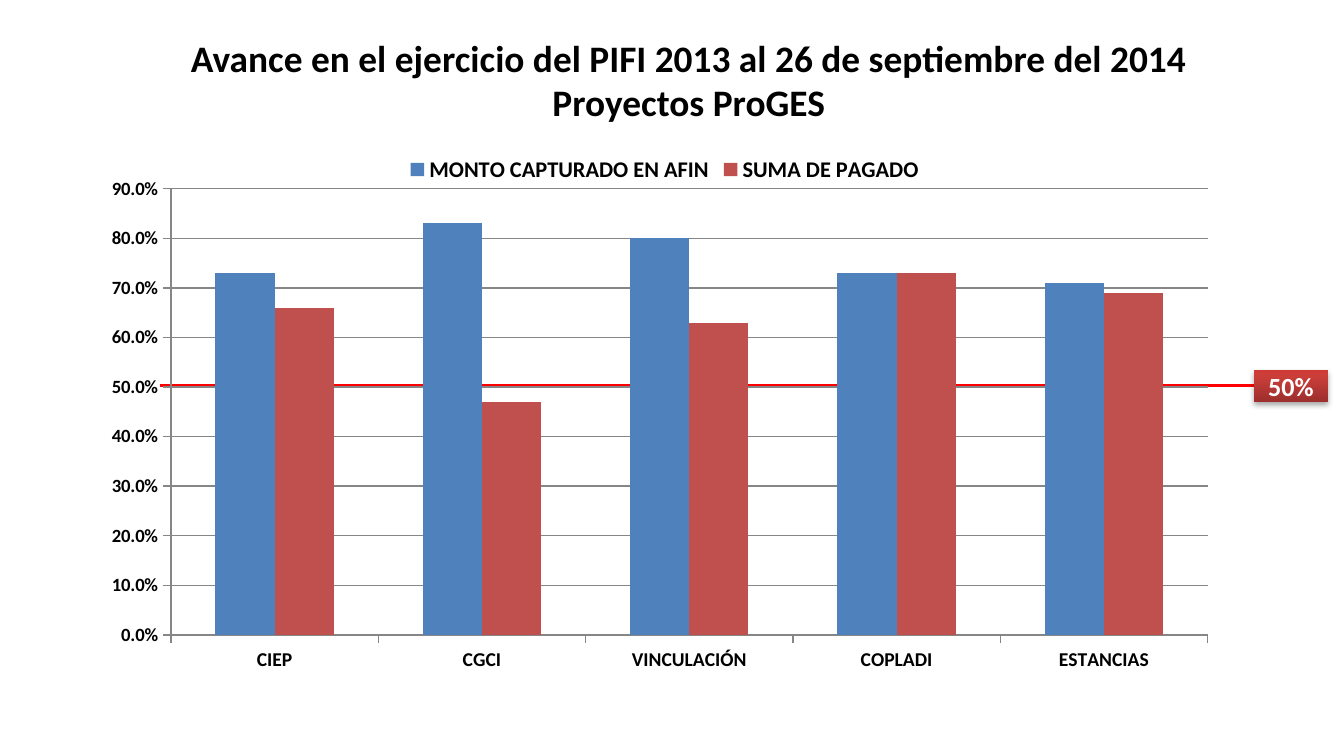
from copy import deepcopy

from lxml import etree
from pptx import Presentation
from pptx import util as u
from pptx.chart.data import CategoryChartData
from pptx.dml.color import RGBColor
from pptx.enum import chart as ch, shapes, text
from pptx.oxml import parse_xml
from pptx.oxml.ns import qn

WIDE = u.Inches(10)
HIGH = WIDE * 9 // 16
BLACK = RGBColor(0, 0, 0)
WHITE = RGBColor(0xFF, 0xFF, 0xFF)
RED = RGBColor(0xFF, 0, 0)
GRAY = RGBColor(0x86, 0x86, 0x86)
BLUE = RGBColor(0x4F, 0x81, 0xBD)
BRICK = RGBColor(0xC0, 0x50, 0x4D)
BADGE = [(0, RGBColor(0x9C, 0x2F, 0x2D)), (0.8, RGBColor(0xCB, 0x3E, 0x3A)),
         (1, RGBColor(0xCE, 0x3B, 0x37))]
A = "http://schemas.openxmlformats.org/drawingml/2006/main"
C = "http://schemas.openxmlformats.org/drawingml/2006/chart"
TITLE = ["Avance en el ejercicio del PIFI 2013 al 26 de septiembre del 2014",
         "Proyectos ProGES"]
UNITS = ["CIEP", "CGCI", "VINCULACIÓN", "COPLADI", "ESTANCIAS"]
SERIES = [
    ("MONTO CAPTURADO EN AFIN", BLUE, [0.73, 0.83, 0.8, 0.73, 0.71]),
    ("SUMA DE PAGADO ", BRICK, [0.66, 0.47, 0.63, 0.73, 0.69]),
]
PLOT = {"x": 0.062, "y": 0.09, "w": 0.915, "h": 0.841}


def area(x, y, w, h):
    """Turn inches into a box of lengths."""
    return [u.Inches(n) for n in (x, y, w, h)]


def style(font, size, color=BLACK):
    """Set a bold Calibri font."""
    font.name, font.size, font.bold = "Calibri", u.Pt(size), True
    font.color.rgb = color


def write(frame, lines, size, color):
    """Fill a text frame with centred lines."""
    frame.word_wrap = True
    frame.text = "\n".join(lines)
    for para in frame.paragraphs:
        para.alignment = text.PP_ALIGN.CENTER
        style(para.font, size, color)


def add_title(slide, box):
    """Place the slide title."""
    frame = slide.shapes.add_textbox(*box).text_frame
    write(frame, TITLE, 20, BLACK)
    frame.auto_size = text.MSO_AUTO_SIZE.SHAPE_TO_FIT_TEXT


def add_goal(slide, box):
    """Draw the goal line across the middle of the box."""
    x, y, w, h = box
    mid = y + h // 2
    line = slide.shapes.add_connector(shapes.MSO_CONNECTOR.STRAIGHT, x, mid, x + w, mid)
    line.line.color.rgb, line.line.width = RED, u.Pt(1.75)
    etree.SubElement(line._element.spPr, qn("a:effectLst"))


def add_badge(slide, box):
    """Place the shaded goal label."""
    badge = slide.shapes.add_shape(shapes.MSO_SHAPE.RECTANGLE, *box)
    badge.line.fill.background()
    badge.fill.gradient()
    badge.fill.gradient_angle = 90
    stops = badge._element.spPr.find(".//" + qn("a:gsLst"))
    stops.append(deepcopy(stops[-1]))
    for stop, (place, color) in zip(badge.fill.gradient_stops, BADGE):
        stop.position, stop.color.rgb = place, color
    badge.shadow.inherit = False
    badge._element.spPr.find(qn("a:effectLst")).append(parse_xml(
        f'<a:outerShdw xmlns:a="{A}" blurRad="{u.Pt(3.1)}" dist="{u.Pt(1.8)}" '
        'dir="5400000" rotWithShape="0"><a:srgbClr val="000000">'
        '<a:alpha val="35000"/></a:srgbClr></a:outerShdw>'))
    frame = badge.text_frame
    write(frame, ["50%"], 14, WHITE)
    frame.vertical_anchor = text.MSO_ANCHOR.MIDDLE
    frame.margin_top = frame.margin_bottom = 0


def clear_back(chart):
    """Make the chart see-through and fix its plot area."""
    space = chart._chartSpace
    plot = space.chart.plotArea
    blank = parse_xml(f'<c:spPr xmlns:c="{C}" xmlns:a="{A}"><a:noFill/>'
                      '<a:ln><a:noFill/></a:ln></c:spPr>')
    plot.append(deepcopy(blank))
    space.find(qn("c:txPr")).addprevious(blank)
    for old in plot.findall(qn("c:layout")):
        plot.remove(old)
    marks = [("layoutTarget", "inner"), ("xMode", "edge"), ("yMode", "edge"), *PLOT.items()]
    parts = "".join(f'<c:{tag} val="{val}"/>' for tag, val in marks)
    plot.insert(0, parse_xml(f'<c:layout xmlns:c="{C}"><c:manualLayout>{parts}'
                             '</c:manualLayout></c:layout>'))


def add_bars(slide, box):
    """Place the clustered column chart."""
    data = CategoryChartData(number_format="0.0%")
    data.categories = UNITS
    for name, _, vals in SERIES:
        data.add_series(name, vals)
    chart = slide.shapes.add_chart(ch.XL_CHART_TYPE.COLUMN_CLUSTERED, *box, data).chart
    style(chart.font, 10)
    chart.has_title = False
    chart.has_legend = True
    chart.legend.position = ch.XL_LEGEND_POSITION.TOP
    chart.legend.include_in_layout = False
    style(chart.legend.font, 12)
    plot = chart.plots[0]
    plot.gap_width, plot.overlap, plot.vary_by_categories = 150, 0, False
    for bar, (_, color, _) in zip(plot.series, SERIES):
        bar.format.fill.solid()
        bar.format.fill.fore_color.rgb = color
    for axis, size in ((chart.category_axis, 10.5), (chart.value_axis, 10)):
        axis.major_tick_mark = ch.XL_TICK_MARK.OUTSIDE
        axis.format.line.color.rgb = GRAY
        style(axis.tick_labels.font, size)
    rate = chart.value_axis
    rate.minimum_scale, rate.maximum_scale, rate.major_unit = 0, 0.9, 0.1
    rate.has_major_gridlines = True
    rate.major_gridlines.format.line.color.rgb = GRAY
    rate.tick_labels.number_format = "0.0%"
    rate.tick_labels.number_format_is_linked = False
    clear_back(chart)


def main():
    """Build and save the slide."""
    deck = Presentation()
    deck.slide_width, deck.slide_height = WIDE, HIGH
    slide = deck.slides.add_slide(deck.slide_layouts[6])
    add_title(slide, area(1.07, 0.21, 8.11, 1.11))
    add_goal(slide, area(1.19, 2.75, 8.35, 0.24))
    add_badge(slide, area(9.33, 2.75, 0.55, 0.24))
    add_bars(slide, area(0.75, 1.05, 8.43, 3.95))
    deck.save("out.pptx")


if __name__ == "__main__":
    main()
